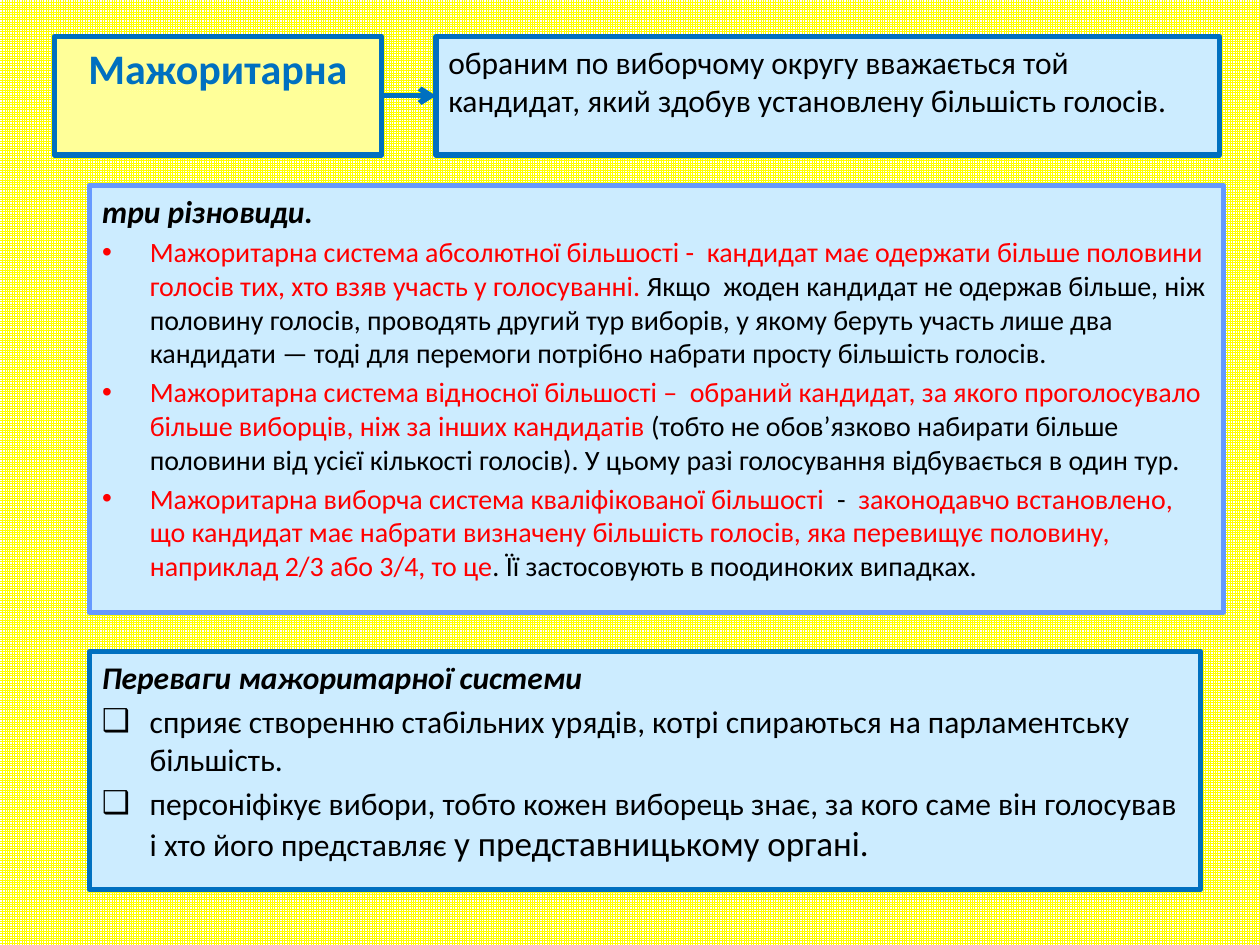
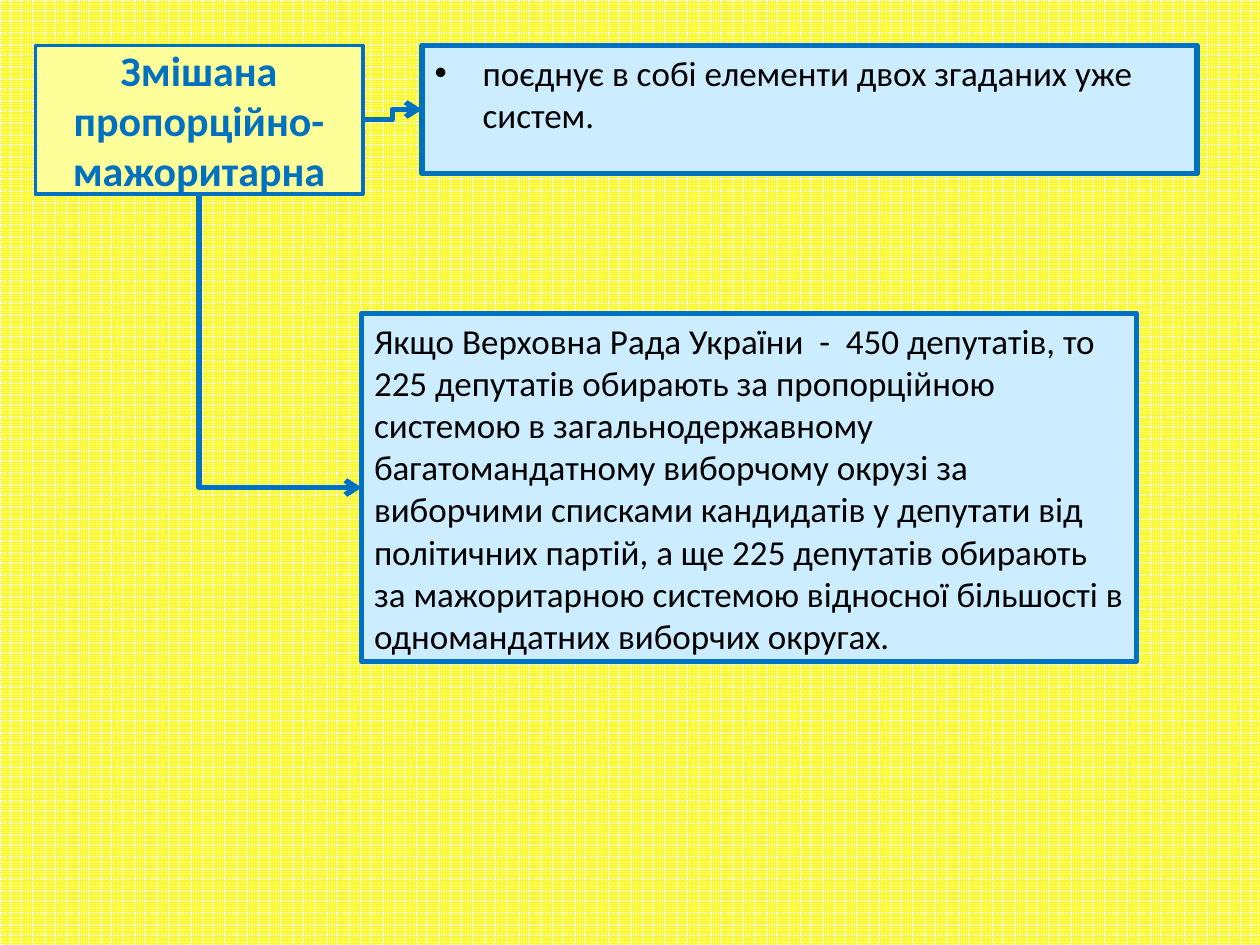
from lxml import etree
from pptx import Presentation
from pptx.dml.color import RGBColor
from pptx.enum.dml import MSO_PATTERN
from pptx.enum.shapes import MSO_CONNECTOR, MSO_SHAPE
from pptx.enum.text import MSO_ANCHOR, MSO_AUTO_SIZE, PP_ALIGN
from pptx.oxml.ns import qn
from pptx.util import Inches, Pt

RECTANGLE = MSO_SHAPE.RECTANGLE
STRAIGHT, ELBOW = MSO_CONNECTOR.STRAIGHT, MSO_CONNECTOR.ELBOW
TOP, MIDDLE = MSO_ANCHOR.TOP, MSO_ANCHOR.MIDDLE
LEFT, CENTER = PP_ALIGN.LEFT, PP_ALIGN.CENTER

BLUE = RGBColor(0x00, 0x70, 0xC0)
SOFT_BLUE = RGBColor(0x66, 0x99, 0xFF)
PALE_BLUE = RGBColor(0xCC, 0xEC, 0xFF)
PALE_YELLOW = RGBColor(0xFF, 0xFF, 0x99)
YELLOW = RGBColor(0xFF, 0xFF, 0x00)
WHITE = RGBColor(0xFF, 0xFF, 0xFF)
BLACK = RGBColor(0x00, 0x00, 0x00)
RED = RGBColor(0xFF, 0x00, 0x00)

FONT = "Calibri"
INDENT = Inches(0.38)
DOT, SQUARE = "•", "❑"
# Connection sites of a rectangle
SITE_LEFT, SITE_BOTTOM, SITE_RIGHT = 1, 2, 3

# Content: a paragraph is (bullet, runs), a run is (text, format)
HEADING = {"size": Pt(24), "bold": True, "color": BLUE}
SUBHEADING = {"size": Pt(18), "bold": True, "italic": True, "color": BLACK}
TEXT = {"size": Pt(18), "color": BLACK}
LARGE = {"size": Pt(20), "color": BLACK}
DETAIL = {"size": Pt(16), "color": BLACK}
KEY = {"size": Pt(16), "color": RED}

MAJORITY = [(None, [("Мажоритарна", HEADING)])]
MAJORITY_MEANING = [(None, [(
    "обраним по виборчому округу вважається той кандидат, який здобув "
    "установлену більшість голосів.", TEXT)])]
MAJORITY_KINDS = [
    (None, [("три різновиди.", SUBHEADING)]),
    (DOT, [
        ("Мажоритарна система абсолютної більшості -  кандидат має одержати "
         "більше половини голосів тих, хто взяв участь у голосуванні. ", KEY),
        ("Якщо  жоден кандидат не одержав більше, ніж половину голосів, "
         "проводять другий тур виборів, у якому беруть участь лише два "
         "кандидати — тоді для перемоги потрібно набрати просту більшість "
         "голосів.", DETAIL)]),
    (DOT, [
        ("Мажоритарна система відносної більшості –  обраний кандидат, за "
         "якого проголосувало більше виборців, ніж за інших кандидатів ", KEY),
        ("(тобто не обов’язково набирати більше половини від усієї кількості "
         "голосів). У цьому разі голосування відбувається в один тур.", DETAIL)]),
    (DOT, [
        ("Мажоритарна виборча система кваліфікованої більшості  ", KEY),
        ("-  ", DETAIL),
        ("законодавчо встановлено, що кандидат має набрати визначену більшість "
         "голосів, яка перевищує половину, наприклад 2/3 або 3/4, то це", KEY),
        (". Її застосовують в поодиноких випадках.", DETAIL)]),
]
MAJORITY_BENEFITS = [
    (None, [("Переваги мажоритарної системи", SUBHEADING)]),
    (SQUARE, [("сприяє створенню стабільних урядів, котрі спираються на "
               "парламентську більшість.", TEXT)]),
    (SQUARE, [("персоніфікує вибори, тобто кожен виборець знає, за кого саме "
               "він голосував і хто його представляє ", TEXT),
              ("у представницькому органі.", LARGE)]),
]

MIXED = [(None, [("Змішана", HEADING)]),
         (None, [("пропорційно-мажоритарна", HEADING)])]
MIXED_MEANING = [(DOT, [("поєднує в собі елементи двох згаданих уже систем.", LARGE)])]
MIXED_EXAMPLE = [(None, [(
    "Якщо Верховна Рада України  -  450 депутатів, то 225 депутатів обирають "
    "за пропорційною системою в загальнодержавному багатомандатному виборчому "
    "окрузі за виборчими списками кандидатів у депутати від політичних партій, "
    "а ще 225 депутатів обирають за мажоритарною системою відносної більшості "
    "в одномандатних виборчих округах.", LARGE)])]


def write_paragraph(paragraph, bullet, runs, align):
    paragraph.alignment = align
    first_size = runs[0][1]["size"]
    paragraph.space_before = Pt(0) if align == CENTER else int(first_size * 0.2)
    properties = paragraph._p.get_or_add_pPr()
    indent = INDENT if bullet else 0
    properties.set("marL", str(indent))
    properties.set("indent", str(-indent))
    if bullet:
        etree.SubElement(properties, qn("a:buFont"), typeface="Arial")
        etree.SubElement(properties, qn("a:buChar"), char=bullet)
    else:
        etree.SubElement(properties, qn("a:buNone"))
    for text, style in runs:
        run = paragraph.add_run()
        run.text = text
        run.font.name = FONT
        for attribute, value in style.items():
            if attribute == "color":
                run.font.color.rgb = value
            else:
                setattr(run.font, attribute, value)


def fill_panel(panel, box, paragraphs, fill=PALE_BLUE, border=BLUE, width=3,
               align=LEFT, anchor=TOP):
    """Place, colour and write one framed panel."""
    for attribute, value in zip(("left", "top", "width", "height"), box):
        setattr(panel, attribute, Inches(value))
    panel.fill.solid()
    panel.fill.fore_color.rgb = fill
    panel.line.color.rgb = border
    panel.line.width = Pt(width)
    frame = panel.text_frame
    settings = {"word_wrap": True, "auto_size": MSO_AUTO_SIZE.NONE,
                "vertical_anchor": anchor}
    for attribute, value in settings.items():
        setattr(frame, attribute, value)
    for number, (bullet, runs) in enumerate(paragraphs):
        paragraph = frame.add_paragraph() if number else frame.paragraphs[0]
        write_paragraph(paragraph, bullet, runs, align)
    return panel


def add_panel(slide, box, paragraphs):
    panel = slide.shapes.add_shape(RECTANGLE, 0, 0, 0, 0)
    panel.shadow.inherit = False
    return fill_panel(panel, box, paragraphs)


def add_heading(slide, box, paragraphs, **format_values):
    return fill_panel(slide.shapes.title, box, paragraphs, fill=PALE_YELLOW,
                      align=CENTER, **format_values)


def add_arrow(slide, kind, source, site, target):
    """Link a site of the source panel to the left side of the target."""
    arrow = slide.shapes.add_connector(kind, 0, 0, 0, 0)
    arrow.begin_connect(source, site)
    arrow.end_connect(target, SITE_LEFT)
    arrow.line.color.rgb = BLUE
    arrow.line.width = Pt(3)
    etree.SubElement(arrow.line._get_or_add_ln(), qn("a:tailEnd"), type="arrow")
    etree.SubElement(arrow._element.spPr, qn("a:effectLst"))
    return arrow


def turn_down_then_right(arrow):
    """Give the elbow one corner: a quarter turn about its centre."""
    width, height = arrow.width, arrow.height
    shift = (width - height) // 2
    arrow.left, arrow.top = arrow.left + shift, arrow.top - shift
    arrow.width, arrow.height = height, width
    properties = arrow._element.spPr
    properties.find(qn("a:prstGeom")).set("prst", "bentConnector2")
    frame = properties.find(qn("a:xfrm"))
    frame.set("rot", str(270 * 60000))
    frame.set("flipH", "1")


def add_grid_slide(deck):
    slide = deck.slides.add_slide(deck.slide_layouts[1])
    backdrop = slide.background.fill
    backdrop.patterned()
    backdrop.pattern = MSO_PATTERN.SMALL_GRID
    backdrop.fore_color.rgb = YELLOW
    backdrop.back_color.rgb = WHITE
    return slide


def build_majority(deck):
    slide = add_grid_slide(deck)
    heading = add_heading(slide, (0.43, 0.29, 2.6, 0.94), MAJORITY)
    meaning = add_panel(slide, (3.46, 0.29, 6.22, 0.94), MAJORITY_MEANING)
    add_panel(slide, (0.71, 5.17, 8.82, 1.89), MAJORITY_BENEFITS)
    add_arrow(slide, STRAIGHT, heading, SITE_RIGHT, meaning)
    fill_panel(slide.placeholders[1], (0.71, 1.47, 9, 3.39), MAJORITY_KINDS,
               border=SOFT_BLUE)


def build_mixed(deck):
    slide = add_grid_slide(deck)
    heading = add_heading(slide, (0.28, 0.36, 2.6, 1.18), MIXED, width=2,
                          anchor=MIDDLE)
    meaning = fill_panel(slide.placeholders[1], (3.35, 0.36, 6.15, 1.02),
                         MIXED_MEANING)
    example = add_panel(slide, (2.87, 2.49, 6.15, 2.76), MIXED_EXAMPLE)
    turn_down_then_right(add_arrow(slide, ELBOW, heading, SITE_BOTTOM, example))
    add_arrow(slide, ELBOW, heading, SITE_RIGHT, meaning)


def main():
    deck = Presentation()
    deck.slide_width, deck.slide_height = Inches(10), Inches(7.5)
    build_majority(deck)
    build_mixed(deck)
    deck.save("out.pptx")


if __name__ == "__main__":
    main()
